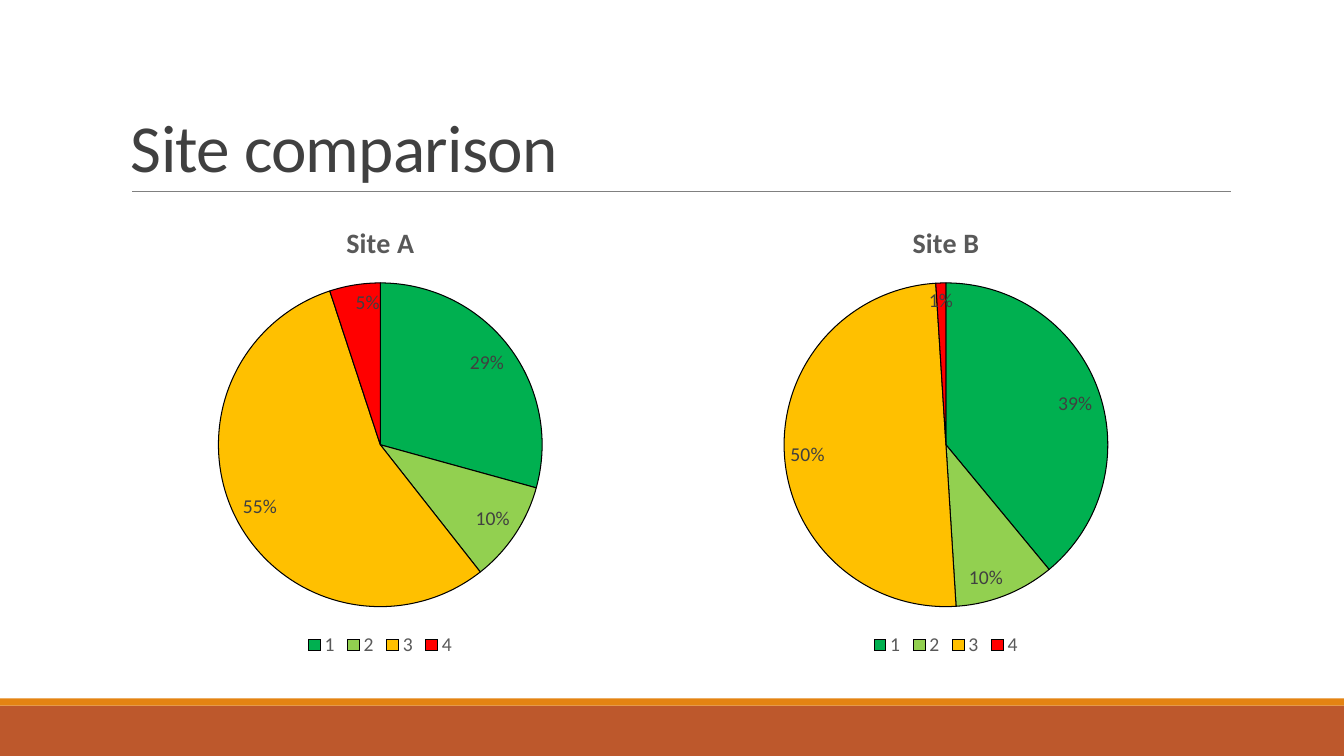
import pptx
import pptx.chart.data
import pptx.dml.color
import pptx.enum.chart
import pptx.enum.shapes
import pptx.enum.text
import pptx.oxml.ns
import pptx.oxml.xmlchemy
import pptx.util

Cm = pptx.util.Cm
Pt = pptx.util.Pt
RGBColor = pptx.dml.color.RGBColor
OxmlElement = pptx.oxml.xmlchemy.OxmlElement

WHITE = RGBColor(0xFF, 0xFF, 0xFF)
BLACK = RGBColor(0x00, 0x00, 0x00)
DARK_GRAY = RGBColor(0x40, 0x40, 0x40)
MID_GRAY = RGBColor(0x59, 0x59, 0x59)
RULE_GRAY = RGBColor(0x80, 0x80, 0x80)
RUST = RGBColor(0xBD, 0x58, 0x2C)
ORANGE = RGBColor(0xE4, 0x83, 0x12)
RATING_COLORS = [
    RGBColor(0x00, 0xB0, 0x50),
    RGBColor(0x92, 0xD0, 0x50),
    RGBColor(0xFF, 0xC0, 0x00),
    RGBColor(0xFF, 0x00, 0x00),
]
RATINGS = ["1", "2", "3", "4"]

SLIDE_WIDTH, SLIDE_HEIGHT = 33.87, 19.05
CHART_TOP, CHART_HEIGHT = 5.13, 11.53
PIE_OFFSET, PIE_DIAMETER = 2.0, 8.16


class SlideBuilder:
    """Holds the style and the current slide; all lengths are in centimetres."""

    font_name = "Calibri"

    def __init__(self, slide):
        self.slide = slide
        slide.background.fill.solid()
        slide.background.fill.fore_color.rgb = WHITE

    def style_font(self, font, size, color, bold=False):
        font.name = self.font_name
        font.size = Pt(size)
        font.bold = bold
        font.color.rgb = color

    def bar(self, top, height, color):
        shape = self.slide.shapes.add_shape(
            pptx.enum.shapes.MSO_SHAPE.RECTANGLE,
            0, Cm(top), Cm(SLIDE_WIDTH), Cm(height))
        shape.shadow.inherit = False
        shape.fill.solid()
        shape.fill.fore_color.rgb = color
        shape.line.fill.background()

    def rule(self, left, right, top):
        connector = self.slide.shapes.add_connector(
            pptx.enum.shapes.MSO_CONNECTOR.STRAIGHT,
            Cm(left), Cm(top), Cm(right), Cm(top))
        connector.line.color.rgb = RULE_GRAY
        connector.line.width = Pt(0.5)
        connector._element.spPr.append(OxmlElement("a:effectLst"))

    def title(self, text, left, top, width, height):
        text_frame = self.slide.shapes.add_textbox(
            Cm(left), Cm(top), Cm(width), Cm(height)).text_frame
        text_frame.word_wrap = True
        text_frame.vertical_anchor = pptx.enum.text.MSO_ANCHOR.BOTTOM
        text_frame.text = text
        paragraph = text_frame.paragraphs[0]
        paragraph.line_spacing = 0.85
        run = paragraph.runs[0]
        self.style_font(run.font, 48, DARK_GRAY)
        run._r.get_or_add_rPr().set("spc", "-50")

    def pie(self, name, shares, left, width):
        data = pptx.chart.data.CategoryChartData()
        data.categories = RATINGS
        data.add_series(name, shares)
        chart = self.slide.shapes.add_chart(
            pptx.enum.chart.XL_CHART_TYPE.PIE,
            Cm(left), Cm(CHART_TOP), Cm(width), Cm(CHART_HEIGHT), data).chart
        self.style_font(chart.font, 10, BLACK)

        # Title and legend
        chart.has_title = True
        chart.chart_title.text_frame.text = name
        title_run = chart.chart_title.text_frame.paragraphs[0].runs[0]
        self.style_font(title_run.font, 20, MID_GRAY, bold=True)
        chart.has_legend = True
        chart.legend.position = pptx.enum.chart.XL_LEGEND_POSITION.BOTTOM
        chart.legend.include_in_layout = False
        self.style_font(chart.legend.font, 14, MID_GRAY)

        # Slices
        plot = chart.plots[0]
        plot.vary_by_categories = True
        for index, color in enumerate(RATING_COLORS):
            slice_format = plot.series[0].points[index].format
            slice_format.fill.solid()
            slice_format.fill.fore_color.rgb = color
            slice_format.line.color.rgb = BLACK
            slice_format.line.width = Pt(0.75)

        # Shares are rounded percentages, so they are labelled as given
        plot.has_data_labels = True
        labels = plot.data_labels
        labels.show_value = True
        labels.show_percentage = False
        labels.number_format = '0"%"'
        labels.number_format_is_linked = False
        labels.position = pptx.enum.chart.XL_LABEL_POSITION.INSIDE_END
        self.style_font(labels.font, 14, DARK_GRAY)
        self.place_pie(chart, width)

    def place_pie(self, chart, width):
        plot_area = chart._chartSpace.chart.plotArea
        for layout in plot_area.findall(pptx.oxml.ns.qn("c:layout")):
            plot_area.remove(layout)
        layout = OxmlElement("c:layout")
        manual = OxmlElement("c:manualLayout")
        layout.append(manual)
        settings = {
            "layoutTarget": "inner",
            "xMode": "edge",
            "yMode": "edge",
            "x": (width - PIE_DIAMETER) / 2 / width,
            "y": PIE_OFFSET / CHART_HEIGHT,
            "w": PIE_DIAMETER / width,
            "h": PIE_DIAMETER / CHART_HEIGHT,
        }
        for tag, value in settings.items():
            element = OxmlElement("c:" + tag)
            element.set("val", str(value))
            manual.append(element)
        plot_area.insert(0, layout)


def main():
    presentation = pptx.Presentation()
    presentation.slide_width = Cm(SLIDE_WIDTH)
    presentation.slide_height = Cm(SLIDE_HEIGHT)
    builder = SlideBuilder(
        presentation.slides.add_slide(presentation.slide_layouts[6]))

    # Footer bands
    builder.bar(17.78, 1.27, RUST)
    builder.bar(17.6, 0.18, ORANGE)

    # Heading
    builder.rule(3.33, 31.01, 4.83)
    builder.title("Site comparison", 3.05, 0.79, 27.94, 4.04)

    # Charts
    builder.pie("Site A", [29, 10, 55, 5], 4.06, 11.05)
    builder.pie("Site B", [39, 10, 50, 1], 17.86, 11.96)

    presentation.save("out.pptx")


if __name__ == "__main__":
    main()
